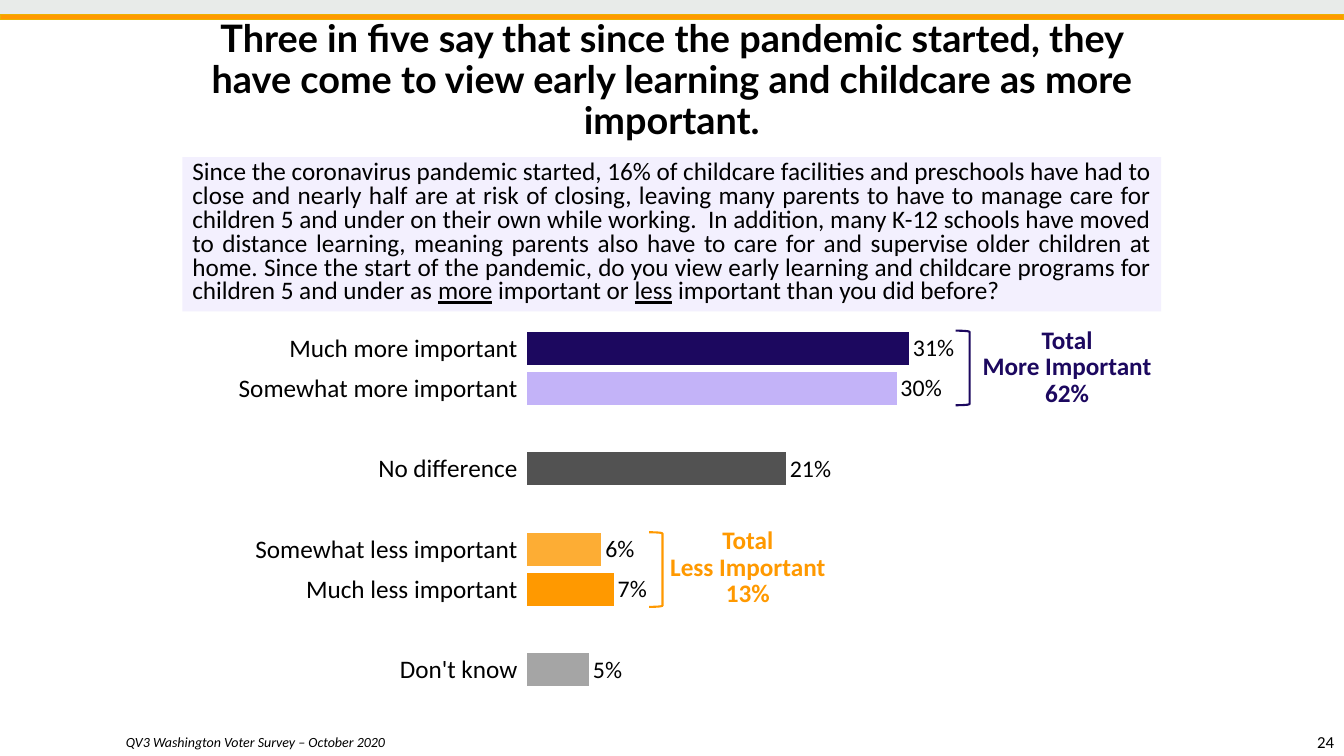
from dataclasses import dataclass

from lxml.etree import fromstring
from pptx import Presentation
from pptx.chart.data import CategoryChartData
from pptx.dml.color import RGBColor
from pptx.enum.chart import XL_CHART_TYPE, XL_LABEL_POSITION, XL_TICK_LABEL_POSITION, XL_TICK_MARK
from pptx.enum.shapes import MSO_SHAPE
from pptx.enum.text import MSO_ANCHOR, PP_ALIGN
from pptx.util import Pt


@dataclass(frozen=True)
class Theme:
    font: str = "Calibri"
    title_font: str = "Lato"
    black: str = "000000"
    purple: str = "1C085F"
    lilac: str = "C3B3F8"
    pale: str = "F3F0FE"
    dark_gray: str = "525252"
    gray: str = "A5A5A5"
    orange: str = "FF9900"
    light_orange: str = "FDAD34"
    gold: str = "EBB201"
    band: str = "E8EBE9"
    title_size: int = 27
    body_size: int = 18
    label_size: int = 17
    page_size: int = 12
    source_size: int = 10


THEME = Theme()

TITLE = ("Three in five say that since the pandemic started, they have come to view "
         "early learning and childcare as more important.")
QUESTION = [
    ("Since the coronavirus pandemic started, 16% of childcare facilities and preschools have had "
     "to close and nearly half are at risk of closing, leaving many parents to have to manage care "
     "for children 5 and under on their own while working.  In addition, many K-12 schools have "
     "moved to distance learning, meaning parents also have to care for and supervise older "
     "children at home. Since the start of the pandemic, do you view early learning and childcare "
     "programs for children 5 and under as ", False),
    ("more", True),
    (" important or ", False),
    ("less", True),
    (" important than you did before?", False),
]
# Answer, share, bar colour; an empty answer leaves a gap between groups
ANSWERS = [
    ("Much more important", 0.31, THEME.purple),
    ("Somewhat more important", 0.30, THEME.lilac),
    ("", None, None),
    ("No difference", 0.21, THEME.dark_gray),
    ("", None, None),
    ("Somewhat less important", 0.06, THEME.light_orange),
    ("Much less important", 0.07, THEME.orange),
    ("", None, None),
    ("Don't know", 0.05, THEME.gray),
]
PLOT_LAYOUT = (
    '<c:layout xmlns:c="http://schemas.openxmlformats.org/drawingml/2006/chart"><c:manualLayout>'
    '<c:layoutTarget val="inner"/><c:xMode val="edge"/><c:yMode val="edge"/>'
    '<c:x val="0.353"/><c:y val="0.019"/><c:w val="0.615"/><c:h val="0.911"/>'
    '</c:manualLayout></c:layout>')


def rgb(color):
    return RGBColor.from_string(color)


def style(font, size, color=THEME.black, name=THEME.font, bold=False, italic=False):
    font.name, font.size = name, Pt(size)
    font.bold, font.italic = bold, italic
    font.color.rgb = rgb(color)


def add_run(p, text, size, **look):
    r = p.add_run()
    r.text = text
    style(r.font, size, **look)
    return r


def add_box(s, shape, box, fill=None, line=None, width=1):
    sp = s.shapes.add_shape(shape, *map(Pt, box))
    sp.shadow.inherit = False
    if fill:
        sp.fill.solid()
        sp.fill.fore_color.rgb = rgb(fill)
    else:
        sp.fill.background()
    if line:
        sp.line.color.rgb = rgb(line)
        sp.line.width = Pt(width)
    else:
        sp.line.fill.background()
    return sp


def add_label(s, box, lines, size, align=PP_ALIGN.LEFT, anchor=MSO_ANCHOR.TOP, spacing=None, **look):
    tf = s.shapes.add_textbox(*map(Pt, box)).text_frame
    tf.word_wrap = True
    tf.vertical_anchor = anchor
    p = tf.paragraphs[0]
    p.alignment, p.line_spacing = align, spacing
    for i, line in enumerate(lines):
        if i:
            p.add_line_break()
        add_run(p, line, size, **look)


def add_title(s):
    sp = s.shapes.title
    sp.left, sp.top, sp.width, sp.height = map(Pt, (130.3, 13, 699.1, 90))
    tf = sp.text_frame
    tf.word_wrap = True
    tf.vertical_anchor = MSO_ANCHOR.MIDDLE
    p = tf.paragraphs[0]
    p.alignment, p.line_spacing = PP_ALIGN.CENTER, 0.9
    add_run(p, TITLE, THEME.title_size, name=THEME.title_font, bold=True)


def add_question(s):
    sp = add_box(s, MSO_SHAPE.RECTANGLE, (130.3, 112.3, 699.1, 110.2), THEME.pale)
    tf = sp.text_frame
    tf.word_wrap = True
    tf.vertical_anchor = MSO_ANCHOR.TOP
    p = tf.paragraphs[0]
    p.alignment, p.line_spacing = PP_ALIGN.JUSTIFY, Pt(17)
    for text, underlined in QUESTION:
        add_run(p, text, THEME.body_size).font.underline = underlined


def add_answers_chart(s):
    data = CategoryChartData(number_format="0%")
    data.categories = [answer for answer, _, _ in ANSWERS]
    data.add_series("Series 1", [share for _, share, _ in ANSWERS])
    box = map(Pt, (149.8, 229, 643, 283.7))
    chart = s.shapes.add_chart(XL_CHART_TYPE.BAR_CLUSTERED, *box, data).chart
    chart.has_legend = chart.has_title = False
    style(chart.font, 16)

    # Axes
    cat, val = chart.category_axis, chart.value_axis
    cat.reverse_order = True
    cat.major_tick_mark = cat.minor_tick_mark = XL_TICK_MARK.NONE
    cat.tick_label_position = XL_TICK_LABEL_POSITION.LOW
    cat.format.line.fill.background()
    style(cat.tick_labels.font, THEME.body_size)
    val.minimum_scale, val.maximum_scale, val.major_unit = 0, 0.45, 0.15
    val.has_major_gridlines = False
    val.visible = False

    # Bars and their labels
    plot = chart.plots[0]
    plot.gap_width = 21
    plot.vary_by_categories = False
    series = plot.series[0]
    series.format.fill.solid()
    series.format.fill.fore_color.rgb = rgb(THEME.lilac)
    for i, (_, _, color) in enumerate(ANSWERS):
        if color:
            fill = series.points[i].format.fill
            fill.solid()
            fill.fore_color.rgb = rgb(color)
    labels = series.data_labels
    labels.show_value = True
    labels.position = XL_LABEL_POSITION.OUTSIDE_END
    labels.number_format, labels.number_format_is_linked = "0%", False
    style(labels.font, THEME.label_size)

    # Fixed plot area
    area = chart.element.find(".//{*}plotArea")
    for old in area.findall("{*}layout"):
        area.remove(old)
    area.insert(0, fromstring(PLOT_LAYOUT))


def add_total(s, bracket, label, lines, color):
    add_box(s, MSO_SHAPE.RIGHT_BRACKET, bracket, line=color, width=1.5)
    add_label(s, label, lines, THEME.body_size, PP_ALIGN.CENTER, spacing=Pt(19),
              color=color, bold=True)


def main():
    prs = Presentation()
    prs.slide_width, prs.slide_height = Pt(960), Pt(540)
    s = prs.slides.add_slide(prs.slide_layouts[5])

    # Header bands and title
    add_box(s, MSO_SHAPE.RECTANGLE, (0, 0, 960, 14), THEME.band)
    add_box(s, MSO_SHAPE.RECTANGLE, (0, 10.5, 960, 3.5), THEME.orange, THEME.gold)
    add_title(s)

    # Survey question and answers
    add_question(s)
    add_answers_chart(s)

    # Group totals
    add_total(s, (682.6, 236.2, 10, 53.3), (690.5, 230.4, 143.3, 64.8),
              ("Total", "More Important", "62%"), THEME.purple)
    add_total(s, (463.7, 380.2, 9.5, 53.3), (469.4, 373.7, 129.6, 64.8),
              ("Total", "Less Important", "13%"), THEME.orange)

    # Source and page number
    add_label(s, (82.8, 496.8, 850.3, 43.2), ["QV3 Washington Voter Survey – October 2020"],
              THEME.source_size, anchor=MSO_ANCHOR.BOTTOM, spacing=0.9, italic=True)
    add_label(s, (818, 519.1, 142, 21.6), ["24"], THEME.page_size, PP_ALIGN.RIGHT)

    prs.save("out.pptx")


if __name__ == "__main__":
    main()
